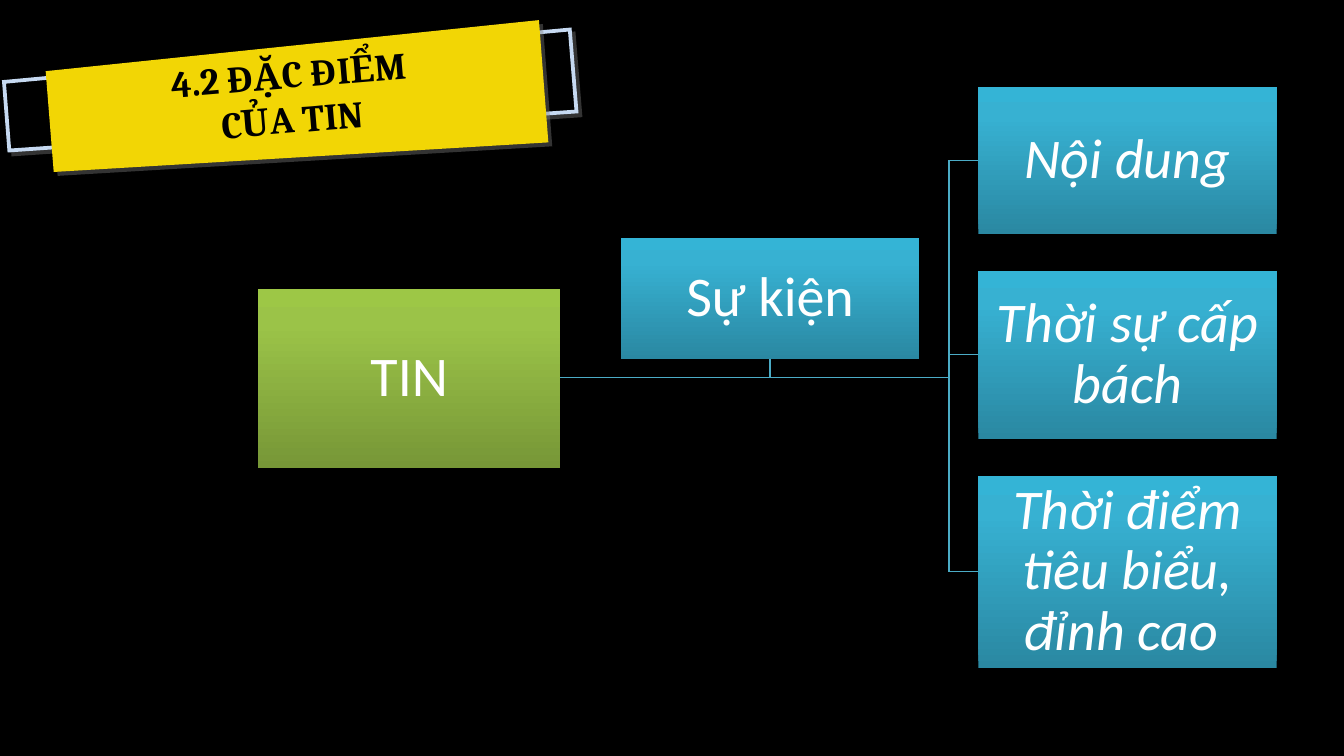
import copy

import pptx
import pptx.util
import pptx.dml.color
import pptx.enum.shapes
import pptx.enum.text
import pptx.oxml
import pptx.oxml.ns

RGB = pptx.dml.color.RGBColor
Inch = pptx.util.Inches
Pt = pptx.util.Pt
Text = pptx.enum.text

BLACK = RGB(0x00, 0x00, 0x00)
WHITE = RGB(0xFF, 0xFF, 0xFF)
YELLOW = RGB(0xF2, 0xD6, 0x05)
PALE = RGB(0xC6, 0xD9, 0xF1)
TEAL = RGB(0x4B, 0xAC, 0xC6)
# Gradient colours run from the bottom edge to the top
GREENS = (RGB(0x77, 0x97, 0x37), RGB(0x9B, 0xC3, 0x48), RGB(0x9D, 0xC7, 0x46))
BLUES = (RGB(0x2A, 0x88, 0xA2), RGB(0x37, 0xB1, 0xD2), RGB(0x34, 0xB4, 0xD6))
STOPS = (0, 0.8, 1)

WIDTH = 10
HEIGHT = WIDTH * 9 / 16
COLS = (1.92, 4.62, 7.28)   # left edges of the three columns
ROOT_W, LEAF_W = 2.25, 2.22
AXIS = 2.81                 # height of the main line
BEND = 7.06                 # where the branches part
TOP, BOTTOM = 0.65, 4.97    # extent of the right column

LEAVES = (
    ("Nội dung", 1.09),
    ("Thời sự cấp bách", 1.25),
    ("Thời điểm tiêu biểu, đỉnh cao ", 1.43),
)


def draw(slide, pts, color, width, fill=None, close=False):
    """Draw an outline through points given in inches."""
    pts = [(Inch(x), Inch(y)) for x, y in pts]
    pen = slide.shapes.build_freeform(*pts[0], scale=1.0)
    pen.add_line_segments(pts[1:], close=close)
    shape = pen.convert_to_shape()
    shape.shadow.inherit = False
    if fill is None:
        shape.fill.background()
    else:
        shape.fill.solid()
        shape.fill.fore_color.rgb = fill
    if color is None:
        shape.line.fill.background()
    else:
        shape.line.color.rgb = color
        shape.line.width = Pt(width)
        # Sharp corners
        shape._element.spPr.find(pptx.oxml.ns.qn("a:ln")).append(
            pptx.oxml.parse_xml(
                f'<a:miter {pptx.oxml.ns.nsdecls("a")} lim="800000"/>'))
    return shape


def shade(shape):
    """Add a hard grey shadow to the lower right."""
    effect = shape._element.spPr.find(pptx.oxml.ns.qn("a:effectLst"))
    effect.append(pptx.oxml.parse_xml(
        f'<a:outerShdw {pptx.oxml.ns.nsdecls("a")} blurRad="0" dist="38100" '
        'dir="2700000" algn="tl" rotWithShape="0"><a:srgbClr val="808080">'
        '<a:alpha val="40000"/></a:srgbClr></a:outerShdw>'))


def blend(shape, colors):
    """Fill with a three-stop gradient, running upwards."""
    fill = shape.fill
    fill.gradient()
    fill.gradient_angle = 90
    stops = shape._element.spPr.find(".//" + pptx.oxml.ns.qn("a:gsLst"))
    stops.append(copy.deepcopy(stops[-1]))
    for stop, place, color in zip(fill.gradient_stops, STOPS, colors):
        stop.position = place
        stop.color.rgb = color


def write(para, text, font, size, color, bold=False, italic=False):
    para.alignment = Text.PP_ALIGN.CENTER
    run = para.add_run()
    run.text = text
    run.font.name = font
    run.font.size = Pt(size)
    run.font.color.rgb = color
    run.font.bold = bold
    run.font.italic = italic


def box(slide, text, left, top, width, height, colors, italic=False):
    """Add one labelled box of the tree."""
    shape = slide.shapes.add_shape(
        pptx.enum.shapes.MSO_SHAPE.RECTANGLE,
        Inch(left), Inch(top), Inch(width), Inch(height))
    shape.shadow.inherit = False
    shape.line.fill.background()
    blend(shape, colors)
    frame = shape.text_frame
    frame.word_wrap = True
    frame.vertical_anchor = Text.MSO_ANCHOR.MIDDLE
    frame.margin_left = frame.margin_right = Inch(0.02)
    frame.margin_top = frame.margin_bottom = Inch(0.02)
    para = frame.paragraphs[0]
    para.line_spacing = 0.9
    write(para, text, "Calibri", 30, WHITE, italic=italic)


def banner(slide):
    """Tilted frame and ribbon with the title on top."""
    shade(draw(slide, ((4.29, 0.83), (0.07, 1.12), (0.03, 0.61), (4.24, 0.22)),
               PALE, 2, BLACK, True))
    shade(draw(slide, ((4.08, 1.06), (0.4, 1.28), (0.34, 0.53), (4.01, 0.15)),
               None, 0, YELLOW, True))
    title = slide.shapes.title
    title.left, title.top = Inch(1.01), Inch(0.33)
    title.width, title.height = Inch(2.3), Inch(0.77)
    title.rotation = 355.2
    frame = title.text_frame
    frame.word_wrap = True
    frame.auto_size = Text.MSO_AUTO_SIZE.NONE
    frame.vertical_anchor = Text.MSO_ANCHOR.TOP
    write(frame.paragraphs[0], "4.2 ĐẶC ĐIỂM CỦA TIN", "Cambria", 20, BLACK,
          bold=True)
    # Bring the title in front of the ribbon
    title._element.getparent().append(title._element)


def tree(slide):
    """Root, event and the three traits, with lines behind the boxes."""
    start = COLS[0] + ROOT_W
    mid = COLS[1] + LEAF_W / 2
    gap = (BOTTOM - TOP - sum(h for _, h in LEAVES)) / (len(LEAVES) - 1)
    tops = [TOP + sum(h + gap for _, h in LEAVES[:i])
            for i in range(len(LEAVES))]

    # Lines
    draw(slide, ((start, AXIS), (mid, AXIS), (mid, 2.67)), TEAL, 0.75)
    for top, (_, high) in reversed(list(zip(tops, LEAVES))):
        y = top + high / 2
        draw(slide, ((start, AXIS), (BEND, AXIS), (BEND, y), (COLS[2], y)),
             TEAL, 0.75)

    # Boxes
    box(slide, "TIN", COLS[0], 2.15, ROOT_W, 1.33, GREENS)
    for top, (text, high) in zip(tops, LEAVES):
        box(slide, text, COLS[2], top, LEAF_W, high, BLUES, italic=True)
    box(slide, "Sự kiện", COLS[1], 1.77, LEAF_W, 0.9, BLUES)


def main():
    deck = pptx.Presentation()
    deck.slide_width, deck.slide_height = Inch(WIDTH), Inch(HEIGHT)
    slide = deck.slides.add_slide(deck.slide_layouts[5])
    back = slide.background.fill
    back.solid()
    back.fore_color.rgb = BLACK
    banner(slide)
    tree(slide)
    deck.save("out.pptx")


if __name__ == "__main__":
    main()
